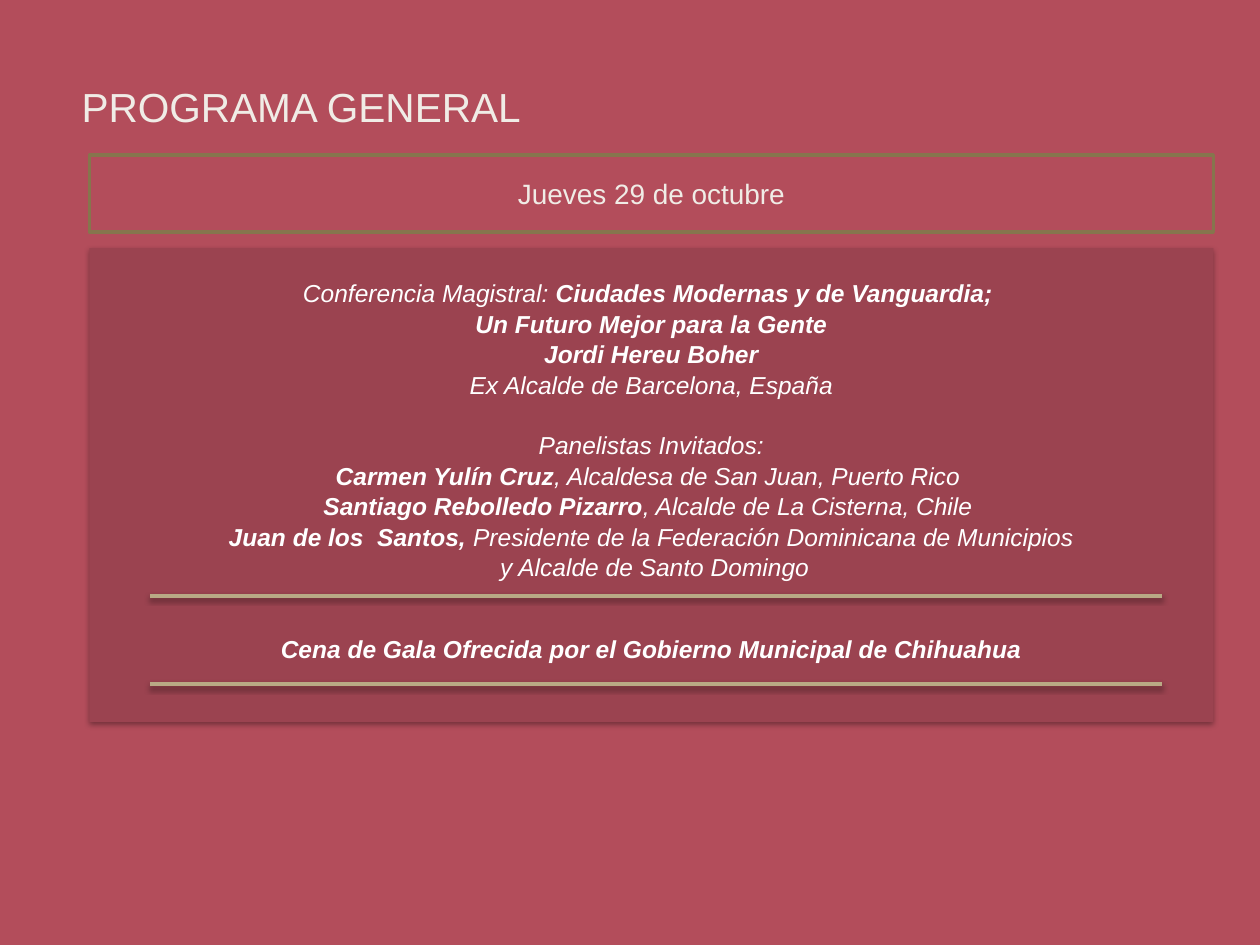
from lxml.etree import SubElement
from pptx import Presentation
from pptx.dml.color import RGBColor
from pptx.enum.shapes import MSO_CONNECTOR, MSO_SHAPE
from pptx.enum.text import MSO_ANCHOR, PP_ALIGN
from pptx.oxml.ns import qn
from pptx.util import Inches, Pt

THEME = {
    "font": "Arial", "back": "B34D5B", "panel": "9B4350", "frame": "86754D",
    "rule": "B9A985", "pale": "F0ECE6", "white": "FFFFFF", "shade": "000000",
    "title": 40, "date": 16, "body": 14, "stroke": 2, "raise": 30000,
}
TITLE = "PROGRAMA GENERAL"
DATE = "Jueves 29 de octubre"
# Each line: space before in points, then (text, bold) runs
LINES = [
    (0, [("Conferencia Magistral: ", False),
         ("Ciudades Modernas y de Vanguardia; ", True)]),
    (0, [("Un Futuro Mejor para la Gente", True)]),
    (0, [("Jordi Hereu Boher", True)]),
    (0, [("Ex Alcalde de Barcelona, España", False)]),
    (16.8, [("Panelistas Invitados:", False)]),
    (0, [("Carmen Yulín Cruz", True),
         (", Alcaldesa de San Juan, Puerto Rico ", False)]),
    (0, [("Santiago Rebolledo Pizarro", True),
         (", Alcalde de La Cisterna, Chile ", False)]),
    (0, [("Juan de los  Santos, ", True),
         ("Presidente de la Federación Dominicana de Municipios", False)]),
    (0, [(" y Alcalde de Santo Domingo", False)]),
    (29.5, [("Cena de Gala Ofrecida por el Gobierno Municipal de Chihuahua", True)]),
]
LEFT, WIDTH = 0.71, 8.92
RULES = (4.73, 5.43)


def color(name):
    return RGBColor.from_string(THEME[name])


def box(items, left, top, width, height):
    shape = items.add_shape(MSO_SHAPE.RECTANGLE, *map(Inches, (left, top, width, height)))
    shape.shadow.inherit = False
    return shape


def text(items, left, top, width, height):
    frame = items.add_textbox(*map(Inches, (left, top, width, height))).text_frame
    frame.word_wrap = True
    return frame


def write(para, words, size, ink, bold=False, slant=False):
    run = para.add_run()
    run.text = words
    font = run.font
    font.name, font.size = THEME["font"], Pt(THEME[size])
    font.color.rgb = color(ink)
    font.bold, font.italic = bold, slant
    return run


def shade(shape, alpha, blur, dist):
    """Give the shape a soft shadow that falls straight down."""
    props = shape._element.spPr
    for old in props.findall(qn("a:effectLst")):
        props.remove(old)
    effect = SubElement(props, qn("a:effectLst"))
    outer = SubElement(effect, qn("a:outerShdw"), blurRad=str(Pt(blur)),
                       dist=str(Pt(dist)), dir="5400000", rotWithShape="0")
    tint = SubElement(outer, qn("a:srgbClr"), val=THEME["shade"])
    SubElement(tint, qn("a:alpha"), val=str(alpha * 1000))


def main():
    deck = Presentation()
    deck.slide_width, deck.slide_height = Inches(10), Inches(7.5)
    slide = deck.slides.add_slide(deck.slide_layouts[6])
    slide.background.fill.solid()
    slide.background.fill.fore_color.rgb = color("back")
    items = slide.shapes

    para = text(items, 0.55, 0.66, 4.76, 0.47).paragraphs[0]
    para.alignment, para.line_spacing = PP_ALIGN.JUSTIFY, 0.8
    run = write(para, TITLE, "title", "pale")
    run._r.get_or_add_rPr().set("baseline", str(THEME["raise"]))

    date = box(items, LEFT, 1.23, WIDTH, 0.61)
    date.fill.background()
    date.line.color.rgb, date.line.width = color("frame"), Pt(THEME["stroke"])
    date.text_frame.vertical_anchor = MSO_ANCHOR.MIDDLE
    para = date.text_frame.paragraphs[0]
    para.alignment = PP_ALIGN.CENTER
    write(para, DATE, "date", "pale")

    panel = box(items, LEFT, 1.97, WIDTH, 3.76)
    panel.fill.solid()
    panel.fill.fore_color.rgb = color("panel")
    panel.line.fill.background()
    shade(panel, 35, 3.1, 1.8)

    body = text(items, LEFT, 1.92, WIDTH, 3.4)
    body.margin_top = Inches(0.28)
    for index, (gap, runs) in enumerate(LINES):
        para = body.add_paragraph() if index else body.paragraphs[0]
        para.alignment, para.line_spacing = PP_ALIGN.CENTER, 1.04
        para.space_before = Pt(gap)
        for words, bold in runs:
            write(para, words, "body", "white", bold, True)

    for level in RULES:
        rule = items.add_connector(MSO_CONNECTOR.STRAIGHT,
                                   *map(Inches, (1.19, level, 9.22, level)))
        rule.line.color.rgb, rule.line.width = color("rule"), Pt(THEME["stroke"])
        shade(rule, 38, 3.1, 1.6)

    deck.save("out.pptx")


if __name__ == "__main__":
    main()
